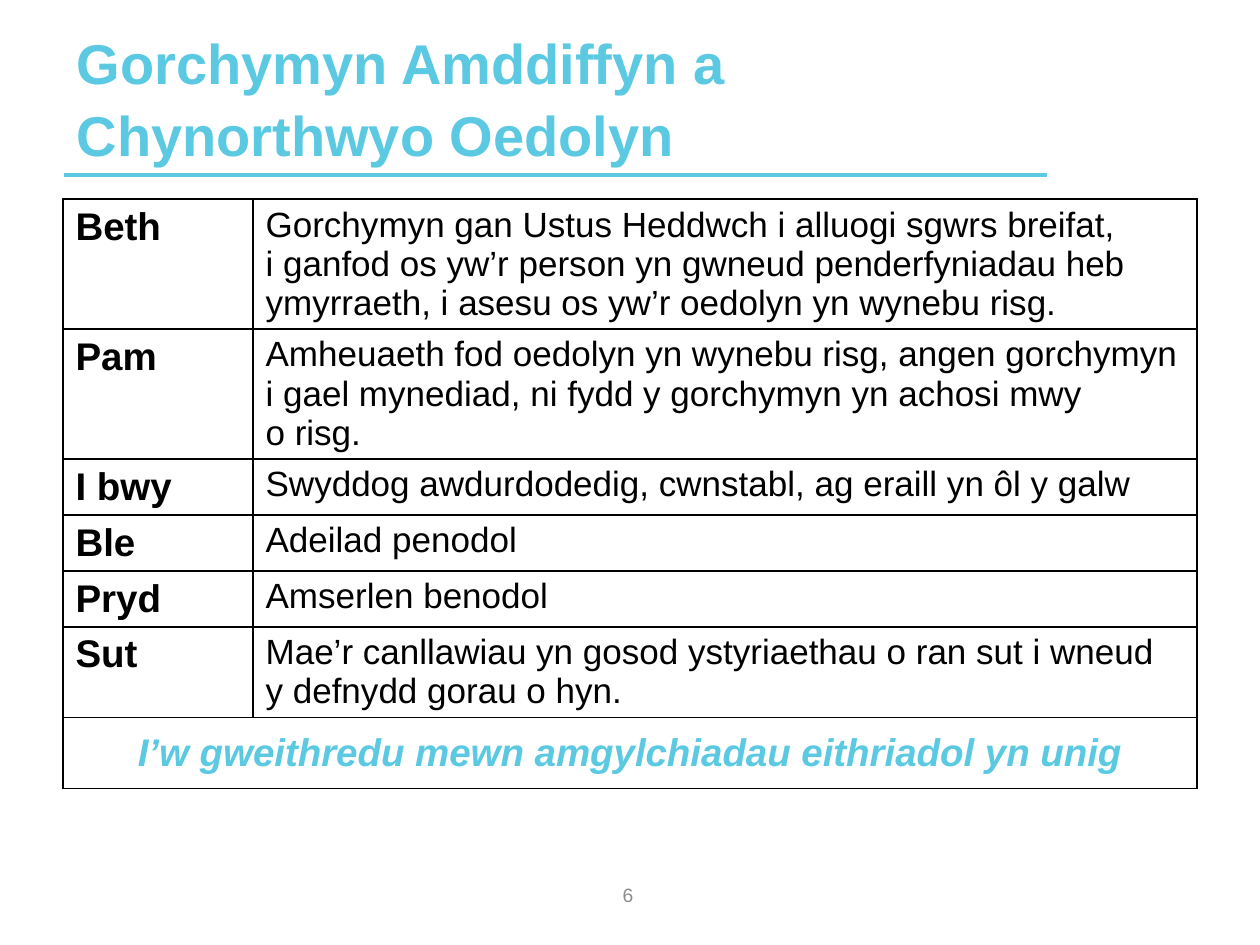
from lxml import etree
from pptx import Presentation
from pptx.dml.color import RGBColor
from pptx.enum.shapes import MSO_CONNECTOR
from pptx.enum.text import MSO_ANCHOR, MSO_AUTO_SIZE, PP_ALIGN
from pptx.oxml.ns import qn
from pptx.util import Pt

PX = 914400 // 126
LEFT, CENTER = PP_ALIGN.LEFT, PP_ALIGN.CENTER
TOP, MIDDLE, BOTTOM = MSO_ANCHOR.TOP, MSO_ANCHOR.MIDDLE, MSO_ANCHOR.BOTTOM
STRAIGHT = MSO_CONNECTOR.STRAIGHT
NO_AUTOFIT = MSO_AUTO_SIZE.NONE

CYAN = RGBColor(0x5C, 0xC9, 0xE3)
BLACK = RGBColor(0, 0, 0)
GREY = RGBColor(0x8C, 0x8C, 0x8C)

FONT = "Arial"
COL_WIDTHS = (190, 944)
ROW_HEIGHTS = (130, 130, 56, 56, 56, 90, 71)
ROWS = (
    ("Beth", "Gorchymyn gan Ustus Heddwch i alluogi sgwrs breifat, \v"
             "i ganfod os yw’r person yn gwneud penderfyniadau heb "
             "ymyrraeth, i asesu os yw’r oedolyn yn wynebu risg."),
    ("Pam", "Amheuaeth fod oedolyn yn wynebu risg, angen gorchymyn "
            "i gael mynediad, ni fydd y gorchymyn yn achosi mwy \vo risg."),
    ("I bwy", "Swyddog awdurdodedig, cwnstabl, ag eraill yn ôl y galw"),
    ("Ble", "Adeilad penodol"),
    ("Pryd", "Amserlen benodol"),
    ("Sut", "Mae’r canllawiau yn gosod ystyriaethau o ran sut i wneud \v"
            "y defnydd gorau o hyn."),
)
CLOSING = "I’w gweithredu mewn amgylchiadau eithriadol yn unig"


def px(n):
    return n * PX


def place(sp, x, y, w, h):
    sp.left, sp.top, sp.width, sp.height = px(x), px(y), px(w), px(h)


def write(tf, text, size, color=BLACK, bold=False, italic=False,
          align=LEFT, spacing=1.0):
    p = tf.paragraphs[0]
    p.text = text
    p.alignment = align
    p.line_spacing = spacing
    for r in p.runs:
        f = r.font
        f.name, f.size, f.bold, f.italic = FONT, Pt(size), bold, italic
        f.color.rgb = color


def add_title(s, text):
    sp = s.shapes.title
    place(sp, 64, 37, 983, 137)
    tf = sp.text_frame
    tf.word_wrap = True
    tf.auto_size = NO_AUTOFIT
    tf.vertical_anchor = BOTTOM
    write(tf, text, 32, color=CYAN, bold=True, spacing=1.07)


def add_rule(s, x1, x2, y):
    line = s.shapes.add_connector(STRAIGHT, px(x1), px(y), px(x2), px(y))
    line.line.color.rgb = CYAN
    line.line.width = Pt(2)
    etree.SubElement(line._element.spPr, qn("a:effectLst"))


def set_borders(cell):
    tcPr = cell._tc.get_or_add_tcPr()
    for i, side in enumerate(("lnL", "lnR", "lnT", "lnB")):
        ln = etree.Element(qn(f"a:{side}"), w=str(Pt(1)))
        fill = etree.SubElement(ln, qn("a:solidFill"))
        etree.SubElement(fill, qn("a:srgbClr"), val=str(BLACK))
        tcPr.insert(i, ln)


def add_order_table(s):
    shape = s.shapes.add_table(len(ROW_HEIGHTS), len(COL_WIDTHS), px(63),
                               px(199), px(sum(COL_WIDTHS)),
                               px(sum(ROW_HEIGHTS)))
    table = shape.table
    table.first_row = table.horz_banding = False
    for col, w in zip(table.columns, COL_WIDTHS):
        col.width = px(w)
    for row, h in zip(table.rows, ROW_HEIGHTS):
        row.height = px(h)
    for cell in table.iter_cells():
        cell.fill.background()
        cell.vertical_anchor = TOP
        set_borders(cell)
    for i, (label, detail) in enumerate(ROWS):
        write(table.cell(i, 0).text_frame, label, 22, bold=True)
        write(table.cell(i, 1).text_frame, detail, 20)
    last = len(ROWS)
    closing = table.cell(last, 0)
    closing.merge(table.cell(last, 1))
    closing.vertical_anchor = MIDDLE
    write(closing.text_frame, CLOSING, 22, color=CYAN, bold=True,
          italic=True, align=CENTER)


def add_page_number(s, number):
    sp = s.shapes.add_textbox(px(481), px(870), px(294), px(50))
    tf = sp.text_frame
    tf.word_wrap = True
    tf.vertical_anchor = MIDDLE
    write(tf, number, 11, color=GREY, align=CENTER)


def main():
    prs = Presentation()
    prs.slide_width, prs.slide_height = px(1260), px(945)
    s = prs.slides.add_slide(prs.slide_layouts[5])
    add_rule(s, 64, 1047, 175)
    add_title(s, "Gorchymyn Amddiffyn a Chynorthwyo Oedolyn")
    add_order_table(s)
    add_page_number(s, "6")
    prs.save("out.pptx")


if __name__ == "__main__":
    main()
